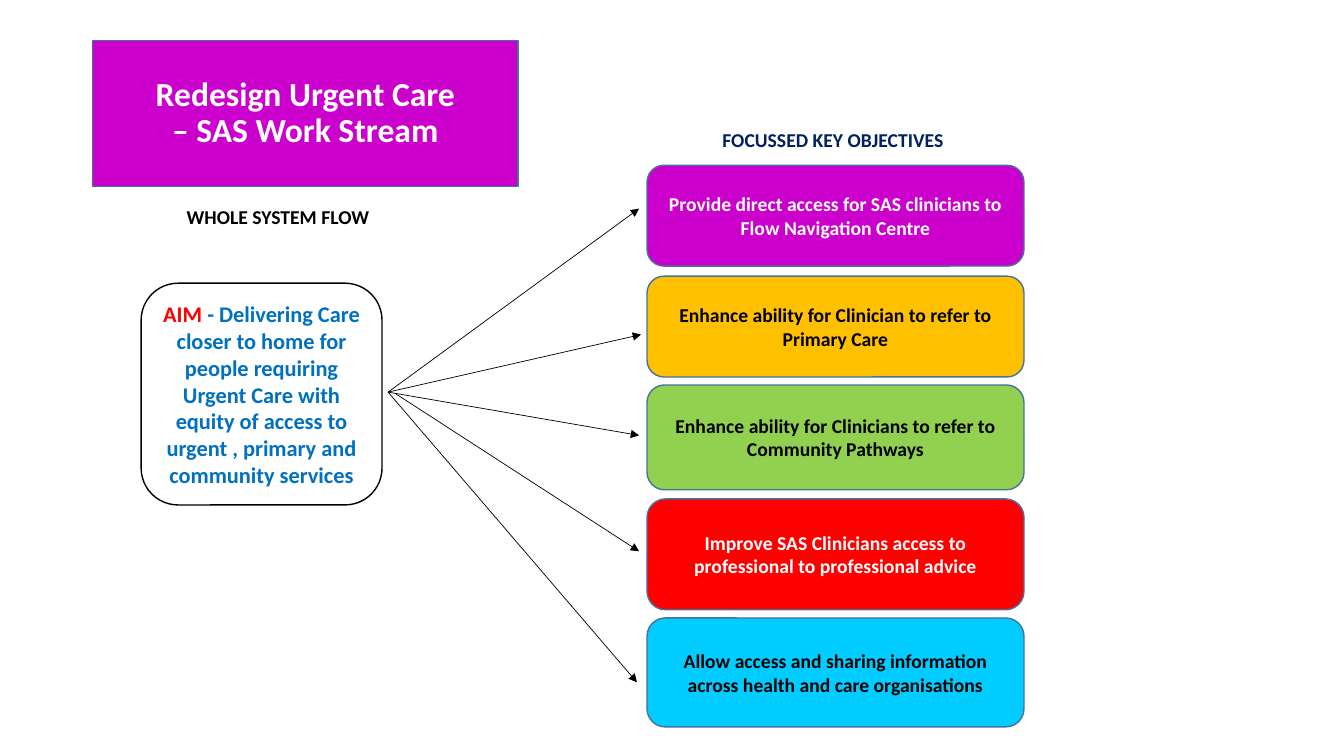
"""Build the urgent care slide: one aim with arrows to five objectives."""
from lxml import etree
from pptx import Presentation
from pptx.dml.color import RGBColor
from pptx.enum.shapes import MSO_CONNECTOR, MSO_SHAPE
from pptx.enum.text import MSO_ANCHOR, MSO_AUTO_SIZE, PP_ALIGN
from pptx.oxml.ns import qn
from pptx.util import Pt

ROUNDED = MSO_SHAPE.ROUNDED_RECTANGLE
STRAIGHT = MSO_CONNECTOR.STRAIGHT
MIDDLE = MSO_ANCHOR.MIDDLE
CENTER = PP_ALIGN.CENTER
NO_FIT = MSO_AUTO_SIZE.NONE

COLORS = {
    "purple": "CC00CC", "amber": "FFC000", "green": "92D050", "red": "FF0000",
    "cyan": "00CCFF", "blue": "0070C0", "navy": "002060", "edge": "43739E",
    "white": "FFFFFF", "black": "000000",
}

TITLE = "Redesign Urgent Care\v– SAS Work Stream"
TITLE_BOX = (66.2, 28.8, 303.8, 104.4)
HEADINGS = [
    ("WHOLE SYSTEM FLOW", "black", (98.6, 142.6, 200, 25)),
    ("FOCUSSED KEY OBJECTIVES", "navy", (486, 87.3, 218, 25)),
]
AIM = [
    ("AIM", "red"),
    (" - Delivering Care closer to home for people requiring Urgent Care with "
     "equity of access to urgent , primary and community services", "blue"),
]
AIM_BOX = (100.8, 202.3, 172.1, 158.4)
OBJECTIVES_LEFT, OBJECTIVES_WIDTH = 462.2, 269.3
OBJECTIVES = [
    ("Provide direct access for SAS clinicians to Flow Navigation Centre",
     "purple", "white", 118.1, 72),
    ("Enhance ability for Clinician to refer to Primary Care",
     "amber", "black", 197.3, 72),
    ("Enhance ability for Clinicians to refer to Community Pathways",
     "green", "black", 275, 74.9),
    ("Improve SAS Clinicians access to professional to professional advice",
     "red", "white", 356.4, 79.2),
    ("Allow access and sharing information across health and care organisations",
     "cyan", "black", 441.4, 77.8),
]
HUB = (277.2, 280.1)
ARROWS = [
    (HUB, (456.5, 149)),
    (HUB, (457.9, 239)),
    (HUB, (456.5, 311)),
    ((283, 281.5), (456.5, 393.8)),
    (HUB, (455, 487.4)),
]


def rgb(name):
    return RGBColor.from_string(COLORS[name])


def write(shape, runs, size):
    tf = shape.text_frame
    for name, value in {"word_wrap": True, "auto_size": NO_FIT,
                        "vertical_anchor": MIDDLE}.items():
        setattr(tf, name, value)
    p = tf.paragraphs[0]
    p.alignment = CENTER
    for i, (text, color) in enumerate(runs):
        if "\v" in text:
            p.text = text
            new_runs = p.runs
        else:
            r = p.add_run()
            r.text = text
            new_runs = [r]
        for r in new_runs:
            for name, value in {"name": "Calibri", "size": Pt(size), "bold": True}.items():
                setattr(r.font, name, value)
            r.font.color.rgb = rgb(color)
    return p


def paint(shape, fill, edge):
    if fill:
        shape.fill.solid()
        shape.fill.fore_color.rgb = rgb(fill)
    else:
        shape.fill.background()
    shape.line.color.rgb = rgb(edge)
    shape.line.width = Pt(1)


def add_box(s, box, runs, size, fill, edge):
    shape = s.shapes.add_shape(ROUNDED, *map(Pt, box))
    shape.shadow.inherit = False
    paint(shape, fill, edge)
    write(shape, runs, size)


def add_arrow(s, start, end):
    line = s.shapes.add_connector(STRAIGHT, *map(Pt, start + end))
    line.line.color.rgb = rgb("black")
    line.line.width = Pt(0.5)
    etree.SubElement(line.line._get_or_add_ln(), qn("a:tailEnd"), type="triangle")
    etree.SubElement(line._element.spPr, qn("a:effectLst"))


def main():
    prs = Presentation()
    prs.slide_width, prs.slide_height = Pt(960), Pt(540)
    s = prs.slides.add_slide(prs.slide_layouts[5])

    title = s.shapes.title
    title.left, title.top, title.width, title.height = map(Pt, TITLE_BOX)
    paint(title, "purple", "edge")
    write(title, [(TITLE, "white")], 24).line_spacing = 0.9

    for text, color, box in HEADINGS:
        write(s.shapes.add_textbox(*map(Pt, box)), [(text, color)], 14)

    add_box(s, AIM_BOX, AIM, 16, None, "black")
    for text, fill, color, top, height in OBJECTIVES:
        box = (OBJECTIVES_LEFT, top, OBJECTIVES_WIDTH, height)
        add_box(s, box, [(text, color)], 14, fill, "edge")
    for start, end in ARROWS:
        add_arrow(s, start, end)

    prs.save("out.pptx")


if __name__ == "__main__":
    main()
